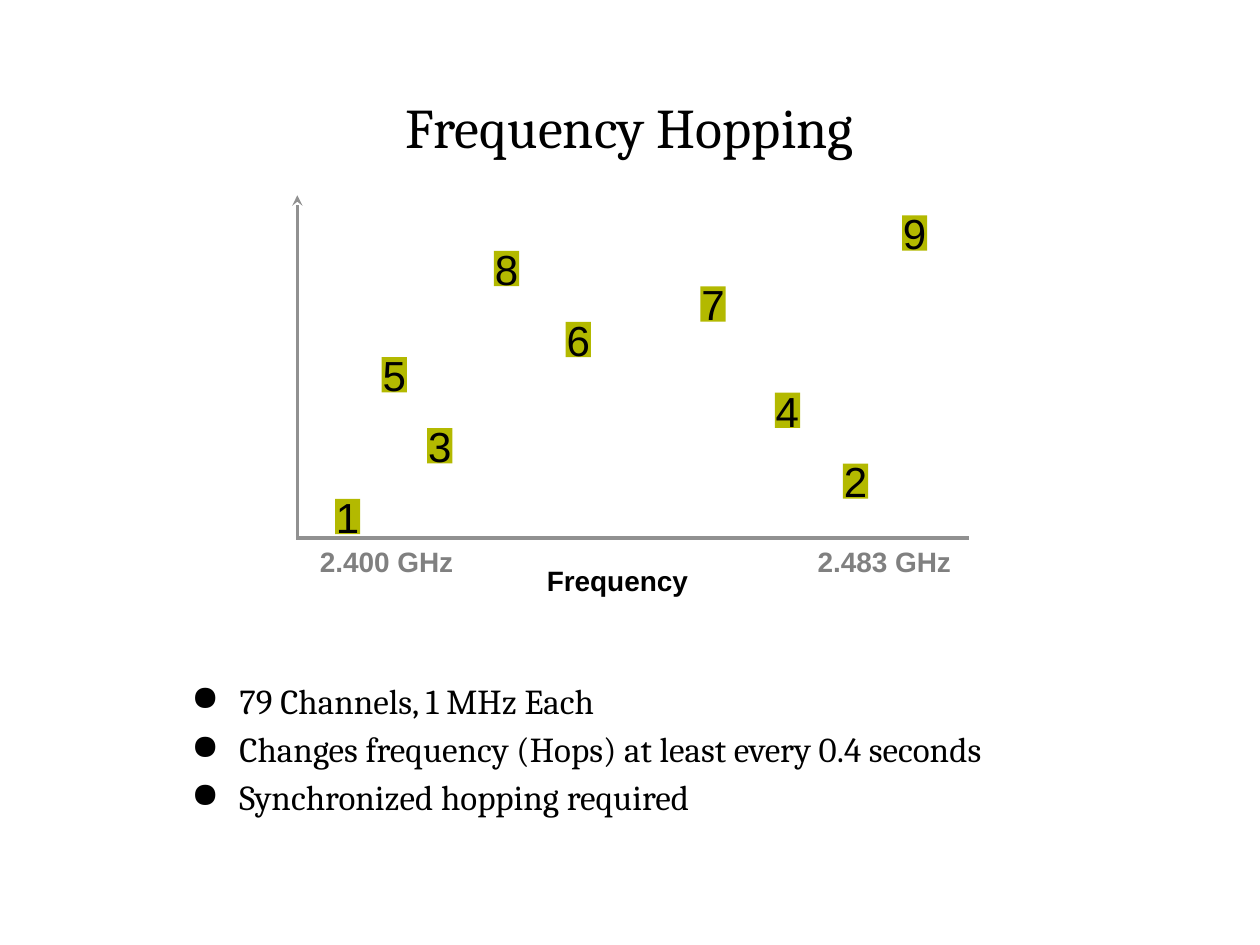
from typing import NamedTuple

from lxml.etree import SubElement
from pptx import Presentation
from pptx.dml.color import RGBColor
from pptx.enum.shapes import MSO_CONNECTOR as Connector, MSO_SHAPE as Shape
from pptx.enum.text import MSO_ANCHOR as Anchor, MSO_AUTO_SIZE as AutoSize, PP_ALIGN as Align
from pptx.oxml.ns import qn
from pptx.util import Inches, Pt

BLACK = RGBColor(0x00, 0x00, 0x00)
LABEL_GRAY = RGBColor(0x80, 0x80, 0x80)
AXIS_GRAY = RGBColor(0x91, 0x91, 0x91)
OLIVE = RGBColor(0xB3, 0xB9, 0x00)


class Style(NamedTuple):
    font: str
    size: int
    color: RGBColor = BLACK
    bold: bool = False


class Label(NamedTuple):
    text: str
    left: float
    top: float
    width: float
    height: float
    style: Style
    align: Align = Align.LEFT
    anchor: Anchor = Anchor.TOP
    wrap: bool = True
    auto_size: AutoSize = AutoSize.NONE


TITLE = Style("Cambria", 32)
BODY = Style("Cambria", 20)
AXIS_NAME = Style("Arial", 16, bold=True)
AXIS_END = Style("Arial", 16, LABEL_GRAY, True)
HOP = Style("Arial", 24)

LABELS = [
    Label("Frequency Hopping", 0.75, 0.5, 8.5, 1, TITLE, Align.CENTER, Anchor.MIDDLE),
    Label("Frequency", 3.5, 4.42, 2.8, 0.37, AXIS_NAME, Align.CENTER,
          auto_size=AutoSize.SHAPE_TO_FIT_TEXT),
    Label("2.400 GHz", 2.44, 4.27, 1.26, 0.37, AXIS_END, wrap=False,
          auto_size=AutoSize.SHAPE_TO_FIT_TEXT),
    Label("2.483 GHz", 6.39, 4.27, 1.26, 0.37, AXIS_END, wrap=False,
          auto_size=AutoSize.SHAPE_TO_FIT_TEXT),
]
BULLETS = [
    "79 Channels, 1 MHz Each",
    "Changes frequency (Hops) at least every 0.4 seconds",
    "Synchronized hopping required",
]
HOP_LEFTS = [2.66, 6.69, 3.39, 6.15, 3.03, 4.49, 5.56, 3.92, 7.16]
FIRST_HOP_TOP, LAST_HOP_TOP = 3.96, 1.71
HOP_WIDTH, HOP_HEIGHT = 0.2, 0.28


def add_span(para, text: str, style: Style) -> None:
    span = para.add_run()
    span.text = text
    span.font.name = style.font
    span.font.size = Pt(style.size)
    span.font.bold = style.bold
    span.font.color.rgb = style.color


def add_label(page, label: Label) -> None:
    box = page.shapes.add_textbox(Inches(label.left), Inches(label.top),
                                  Inches(label.width), Inches(label.height))
    frame = box.text_frame
    frame.word_wrap = label.wrap
    frame.auto_size = label.auto_size
    frame.vertical_anchor = label.anchor
    para = frame.paragraphs[0]
    para.alignment = label.align
    add_span(para, label.text, label.style)


def add_bullets(page, lines: list[str]) -> None:
    box = page.shapes.add_textbox(Inches(0.25), Inches(4.75), Inches(8.84), Inches(2.42))
    frame = box.text_frame
    frame.word_wrap = True
    frame.vertical_anchor = Anchor.MIDDLE
    frame.margin_left = Inches(1.27)
    for index, line in enumerate(lines):
        para = frame.add_paragraph() if index else frame.paragraphs[0]
        para.line_spacing = 0.9
        para.space_before = Pt(6)
        properties = para._p.get_or_add_pPr()
        properties.set("marL", str(Inches(0.38)))
        properties.set("indent", str(-Inches(0.38)))
        SubElement(properties, qn("a:buChar")).set("char", "●")
        add_span(para, line, BODY)


def add_axis(page, start: tuple[float, float], end: tuple[float, float],
             arrow: bool = False) -> None:
    axis = page.shapes.add_connector(Connector.STRAIGHT, *map(Inches, start + end))
    axis.line.color.rgb = AXIS_GRAY
    axis.line.width = Pt(2)
    if arrow:
        SubElement(axis.line._get_or_add_ln(), qn("a:tailEnd")).set("type", "stealth")
    SubElement(axis._element.spPr, qn("a:effectLst"))


def add_hop(page, number: int, left: float, top: float) -> None:
    hop = page.shapes.add_shape(Shape.RECTANGLE, Inches(left), Inches(top),
                                Inches(HOP_WIDTH), Inches(HOP_HEIGHT))
    hop.shadow.inherit = False
    hop.fill.solid()
    hop.fill.fore_color.rgb = OLIVE
    hop.line.fill.background()
    frame = hop.text_frame
    frame.word_wrap = False
    frame.vertical_anchor = Anchor.MIDDLE
    para = frame.paragraphs[0]
    para.alignment = Align.CENTER
    add_span(para, str(number), HOP)


def main() -> None:
    deck = Presentation()
    deck.slide_width, deck.slide_height = Inches(10), Inches(7.5)
    page = deck.slides.add_slide(deck.slide_layouts[6])
    for label in LABELS:
        add_label(page, label)
    add_bullets(page, BULLETS)
    add_axis(page, (7.69, 4.27), (2.35, 4.27))
    add_axis(page, (2.36, 4.28), (2.36, 1.55), arrow=True)
    step = (LAST_HOP_TOP - FIRST_HOP_TOP) / (len(HOP_LEFTS) - 1)
    for index, left in enumerate(HOP_LEFTS):
        add_hop(page, index + 1, left, FIRST_HOP_TOP + index * step)
    deck.save("out.pptx")


if __name__ == "__main__":
    main()
